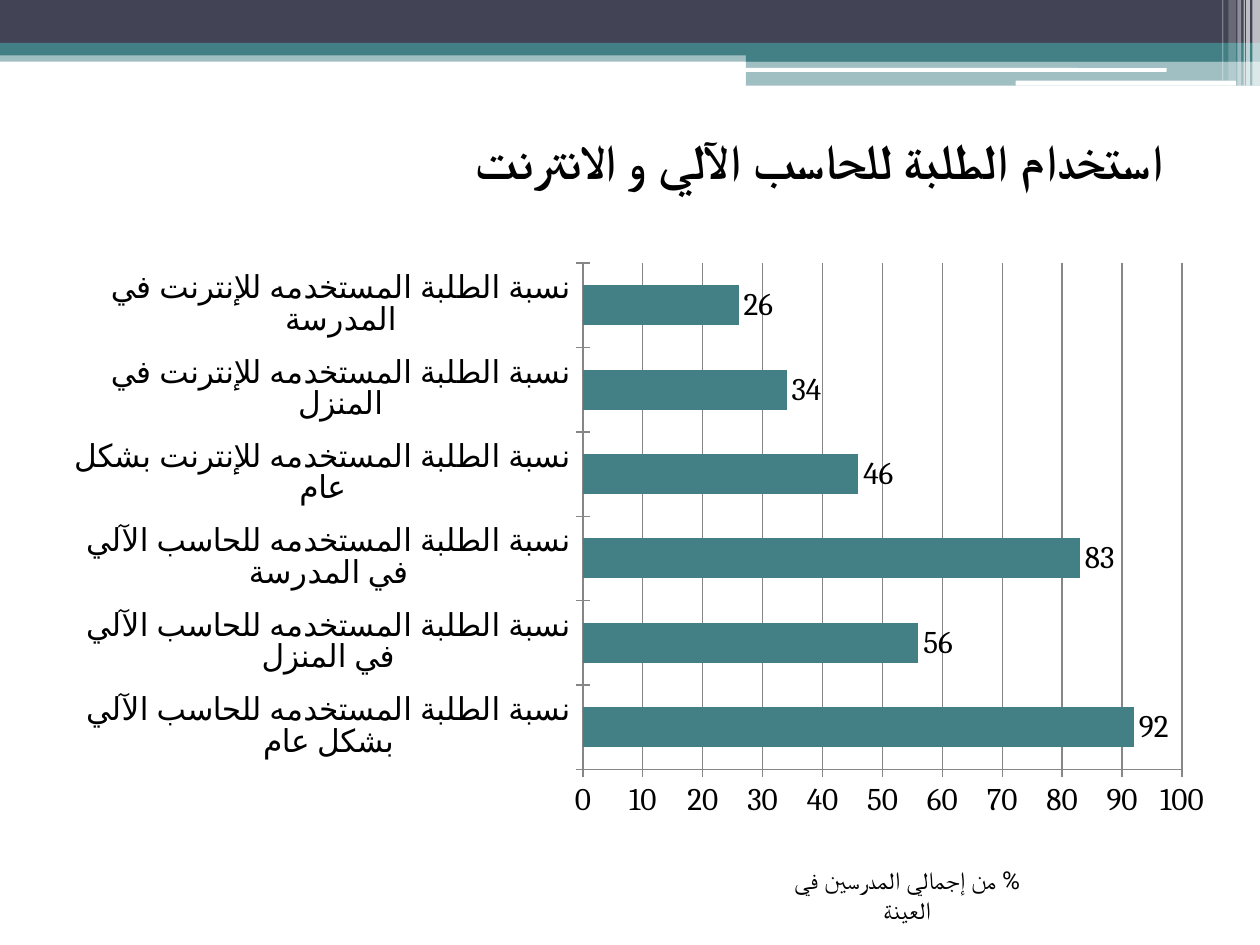
from dataclasses import dataclass

from lxml.etree import SubElement
from pptx import Presentation
from pptx.chart.data import CategoryChartData as ChartData
from pptx.dml.color import RGBColor
from pptx.enum.chart import XL_CHART_TYPE as ChartType
from pptx.enum.chart import XL_LABEL_POSITION as LabelPosition
from pptx.enum.chart import XL_TICK_MARK as TickMark
from pptx.enum.shapes import MSO_SHAPE as Shape
from pptx.enum.text import MSO_ANCHOR as Anchor
from pptx.enum.text import PP_ALIGN as Align
from pptx.oxml import parse_xml
from pptx.oxml.ns import nsdecls, qn
from pptx.util import Inches, Pt

COLUMNS, ROWS = 1000, 750
CELL = Inches(10) // COLUMNS


@dataclass(frozen=True)
class Theme:
    dark: str = "424456"
    teal: str = "438086"
    white: str = "FFFFFF"
    ink: str = "000000"
    grid: str = "868686"
    arabic_font: str = "Roboto"
    number_font: str = "Cambria"
    title_size: int = 28
    chart_size: int = 18
    caption_size: int = 14


@dataclass(frozen=True)
class Box:
    """A region measured in grid cells."""
    left: int
    top: int
    width: int
    height: int

    def inner(self, left, top, width, height):
        return Box(self.left + left, self.top + top, width, height)

    def lengths(self):
        return [cells * CELL for cells in (self.left, self.top, self.width, self.height)]


THEME = Theme()
STUDENT_SHARES = [
    ("نسبة الطلبة المستخدمه للحاسب الآلي بشكل عام", 92),
    ("نسبة الطلبة المستخدمه للحاسب الآلي في المنزل", 56),
    ("نسبة الطلبة المستخدمه للحاسب الآلي في المدرسة", 83),
    ("نسبة الطلبة المستخدمه للإنترنت بشكل عام", 46),
    ("نسبة الطلبة المستخدمه للإنترنت في المنزل", 34),
    ("نسبة الطلبة المستخدمه للإنترنت في المدرسة", 26),
]


def rgb(color):
    return RGBColor.from_string(color)


def style_font(font, size, name, color=THEME.ink, bold=False):
    font.size, font.name, font.bold = Pt(size), name, bold
    font.color.rgb = rgb(color)


def add_band(page, box, color, opacity=100, kind=Shape.RECTANGLE):
    band = page.shapes.add_shape(kind, *box.lengths())
    band.shadow.inherit = False
    band.fill.solid()
    band.fill.fore_color.rgb = rgb(color)
    band.line.fill.background()
    if opacity < 100:
        tone = band.fill._xPr.find(qn("a:solidFill"))[0]
        SubElement(tone, qn("a:alpha"), val=str(opacity * 1000))


def add_text(page, box, text, size, align, bold=False):
    frame = page.shapes.add_textbox(*box.lengths()).text_frame
    frame.word_wrap = True
    frame.vertical_anchor = Anchor.TOP
    para = frame.paragraphs[0]
    para.alignment = align
    para._p.get_or_add_pPr().set("rtl", "1")
    span = para.add_run()
    span.text = text
    style_font(span.font, size, THEME.arabic_font, bold=bold)
    SubElement(span.font._rPr, qn("a:cs"), typeface=THEME.arabic_font)


def draw_header(page, box):
    # Full-width bands
    add_band(page, box.inner(0, 40, box.width, 9), THEME.teal, 50)
    add_band(page, box.inner(0, 0, box.width, 34), THEME.dark)
    add_band(page, box.inner(0, 34, box.width, 10), THEME.teal)

    # Step on the right, with its white rules
    add_band(page, box.inner(592, 39, 408, 10), THEME.teal)
    add_band(page, box.inner(592, 48, 408, 20), THEME.teal, 50)
    for left, top, width, height in ((591, 54, 335, 3), (806, 64, 175, 4)):
        add_band(page, box.inner(left, top, width, height), THEME.white,
                 kind=Shape.ROUNDED_RECTANGLE)

    # Translucent stripes at the right edge
    stripes = [(994, 6, 68, 65), (989, 3, 68, 65), (987, 1, 68, 60),
               (982, 3, 68, 40), (975, 6, 64, 20), (970, 1, 64, 30)]
    for left, width, height, opacity in stripes:
        add_band(page, box.inner(left, 0, width, height), THEME.white, opacity)


def set_plot_area(chart, **shares):
    layout = parse_xml(
        f'<c:layout {nsdecls("c")}><c:manualLayout><c:layoutTarget val="inner"/>'
        '<c:xMode val="edge"/><c:yMode val="edge"/>'
        + "".join(f'<c:{name} val="{share}"/>' for name, share in shares.items())
        + "</c:manualLayout></c:layout>")
    area = chart._chartSpace.chart.plotArea
    for old in area.findall(qn("c:layout")):
        area.remove(old)
    area.insert(0, layout)


def draw_chart(page, box):
    data = ChartData(number_format="0")
    data.categories = [name for name, share in STUDENT_SHARES]
    data.add_series("Series 1", [share for name, share in STUDENT_SHARES])
    chart = page.shapes.add_chart(ChartType.BAR_CLUSTERED, *box.lengths(), data).chart
    chart.has_legend = chart.has_title = False
    style_font(chart.font, THEME.chart_size, THEME.number_font)
    set_plot_area(chart, x=0.44, y=0.03, w=0.53, h=0.81)

    # Bars and their values
    plot = chart.plots[0]
    plot.gap_width, plot.vary_by_categories = 110, False
    bars = plot.series[0].format.fill
    bars.solid()
    bars.fore_color.rgb = rgb(THEME.teal)
    plot.has_data_labels = True
    labels = plot.data_labels
    labels.show_value = True
    labels.number_format, labels.number_format_is_linked = "0", False
    labels.position = LabelPosition.OUTSIDE_END
    style_font(labels.font, THEME.chart_size, THEME.number_font)

    # Axes
    names, scale = chart.category_axis, chart.value_axis
    scale.minimum_scale, scale.maximum_scale, scale.major_unit = 0, 100, 10
    scale.tick_labels.number_format = "0"
    scale.tick_labels.number_format_is_linked = False
    scale.has_major_gridlines = True
    for axis, font_name in ((names, THEME.arabic_font), (scale, THEME.number_font)):
        axis.major_tick_mark = TickMark.CROSS
        axis.minor_tick_mark = TickMark.NONE
        style_font(axis.tick_labels.font, THEME.chart_size, font_name)
    for ruled in (names, scale, scale.major_gridlines):
        ruled.format.line.color.rgb = rgb(THEME.grid)
        ruled.format.line.width = Pt(0.75)


def draw_content(page, box):
    draw_chart(page, box.inner(59, 94, 906, 496))
    add_text(page, box.inner(335, -1, 598, 57), "استخدام الطلبة للحاسب الآلي و الانترنت",
             THEME.title_size, Align.RIGHT, bold=True)
    add_text(page, box.inner(602, 582, 236, 34), "% من إجمالي المدرسين في العينة",
             THEME.caption_size, Align.CENTER)


def main():
    deck = Presentation()
    deck.slide_width, deck.slide_height = COLUMNS * CELL, ROWS * CELL
    page = deck.slides.add_slide(deck.slide_layouts[6])
    draw_header(page, Box(0, 0, COLUMNS, 100))
    draw_content(page, Box(0, 100, COLUMNS, ROWS - 100))
    deck.save("out.pptx")


if __name__ == "__main__":
    main()
